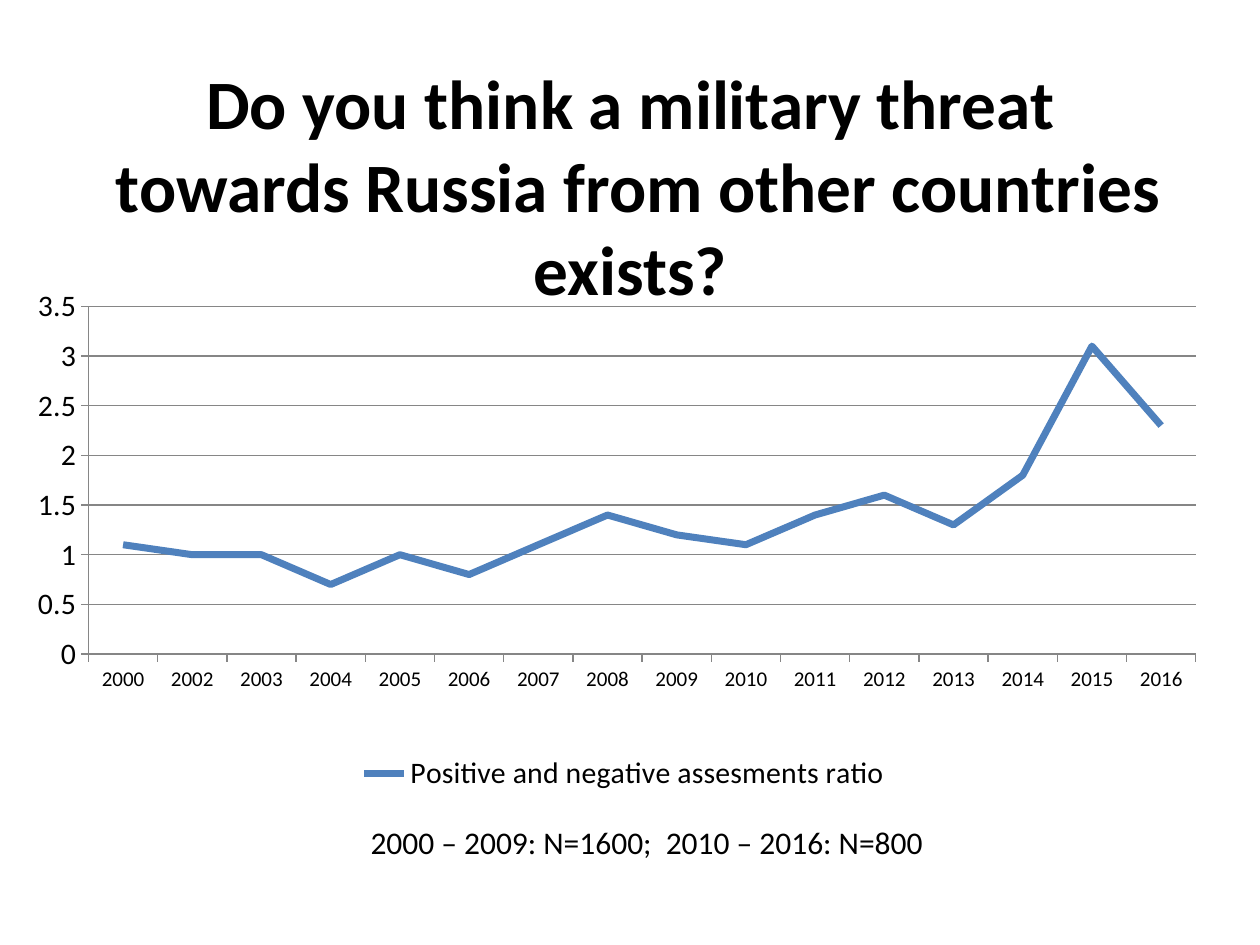
from dataclasses import dataclass

from lxml import etree
from pptx import Presentation
from pptx.chart.data import CategoryChartData
from pptx.dml.color import RGBColor
from pptx.enum.chart import XL_CHART_TYPE, XL_LEGEND_POSITION, XL_MARKER_STYLE, XL_TICK_MARK
from pptx.enum.text import MSO_ANCHOR, PP_ALIGN
from pptx.oxml.ns import qn
from pptx.util import Inches, Pt

LINE = XL_CHART_TYPE.LINE
BOTTOM = XL_LEGEND_POSITION.BOTTOM
NO_MARKER = XL_MARKER_STYLE.NONE
OUTSIDE = XL_TICK_MARK.OUTSIDE
MIDDLE, TOP = MSO_ANCHOR.MIDDLE, MSO_ANCHOR.TOP
CENTER = PP_ALIGN.CENTER


@dataclass(frozen=True)
class Theme:
    font: str = "Calibri"
    text: RGBColor = RGBColor(0x00, 0x00, 0x00)
    series: RGBColor = RGBColor(0x4F, 0x81, 0xBD)
    grid: RGBColor = RGBColor(0x86, 0x86, 0x86)
    title_size: float = 39.6
    note_size: float = 18
    value_size: float = 17
    year_size: float = 12


THEME = Theme()
TITLE = ["Do you think a military threat", " towards Russia from other countries exists?"]
NOTE = ["2000 – 2009: N=1600;  2010 – 2016: N=800"]
YEARS = ["2000"] + [str(year) for year in range(2002, 2017)]
RATIOS = [1.1, 1, 1, 0.7, 1, 0.8, 1.1, 1.4, 1.2, 1.1, 1.4, 1.6, 1.3, 1.8, 3.1, 2.3]
PLOT = {"x": 0.05, "y": 0.04, "w": 0.93, "h": 0.68}


def set_font(font, size, bold=False):
    formats = {"name": THEME.font, "size": Pt(size), "bold": bold}
    for name, value in formats.items():
        setattr(font, name, value)
    font.color.rgb = THEME.text


def add_text(s, box, lines, size, bold=False, anchor=TOP):
    tf = s.shapes.add_textbox(*map(Inches, box)).text_frame
    for name, value in {"word_wrap": True, "vertical_anchor": anchor}.items():
        setattr(tf, name, value)
    p = tf.paragraphs[0]
    p.alignment = CENTER
    for i, line in enumerate(lines):
        if i:
            p.add_line_break()
        r = p.add_run()
        r.text = line
        set_font(r.font, size, bold)


def set_plot_layout(chart, plot):
    area = chart.plots[0]._element.getparent()
    for old in area.findall(qn("c:layout")):
        area.remove(old)
    layout = etree.Element(qn("c:layout"))
    manual = etree.SubElement(layout, qn("c:manualLayout"))
    values = {"layoutTarget": "inner", "xMode": "edge", "yMode": "edge", **plot}
    for name, value in values.items():
        etree.SubElement(manual, qn(f"c:{name}")).set("val", str(value))
    area.insert(0, layout)


def add_ratio_chart(s, box):
    data = CategoryChartData()
    data.categories = YEARS
    data.add_series("Positive and negative assesments ratio", RATIOS)
    chart = s.shapes.add_chart(LINE, *map(Inches, box), data).chart
    chart.has_title = False
    set_font(chart.font, THEME.year_size)
    set_plot_layout(chart, PLOT)

    series = chart.plots[0].series[0]
    chart.plots[0].vary_by_categories = False
    series.smooth = False
    series.marker.style = NO_MARKER
    series.format.line.color.rgb = THEME.series
    series.format.line.width = Pt(4)

    scale = {"minimum_scale": 0, "maximum_scale": 3.5, "major_unit": 0.5, "has_major_gridlines": True}
    for name, value in scale.items():
        setattr(chart.value_axis, name, value)
    chart.value_axis.tick_labels.number_format = "General"
    chart.value_axis.tick_labels.number_format_is_linked = False
    axes = [(chart.category_axis, THEME.year_size), (chart.value_axis, THEME.value_size)]
    for axis, size in axes:
        axis.major_tick_mark = OUTSIDE
        set_font(axis.tick_labels.font, size)
    for part in (chart.category_axis, chart.value_axis, chart.value_axis.major_gridlines):
        part.format.line.color.rgb = THEME.grid
        part.format.line.width = Pt(0.75)

    chart.has_legend = True
    for name, value in {"position": BOTTOM, "include_in_layout": False}.items():
        setattr(chart.legend, name, value)
    set_font(chart.legend.font, THEME.value_size)


def main():
    prs = Presentation()
    prs.slide_width, prs.slide_height = Inches(10), Inches(7.5)
    s = prs.slides.add_slide(prs.slide_layouts[6])
    add_text(s, (0.16, 0.99, 9.69, 0.95), TITLE, THEME.title_size, bold=True, anchor=MIDDLE)
    add_ratio_chart(s, (0.23, 2.27, 9.45, 4.06))
    add_text(s, (2.76, 6.48, 4.75, 0.4), NOTE, THEME.note_size)
    prs.save("out.pptx")


if __name__ == "__main__":
    main()
